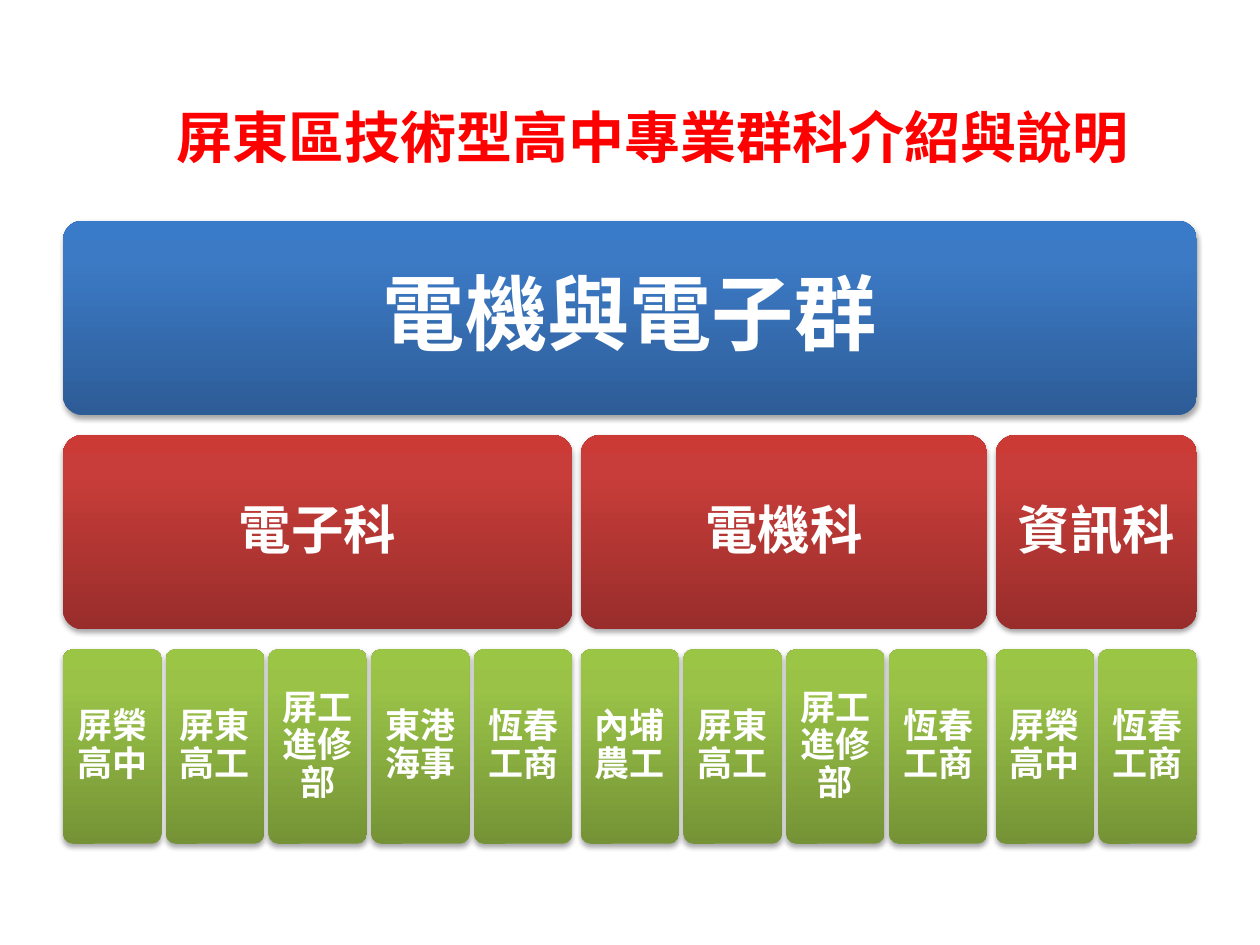
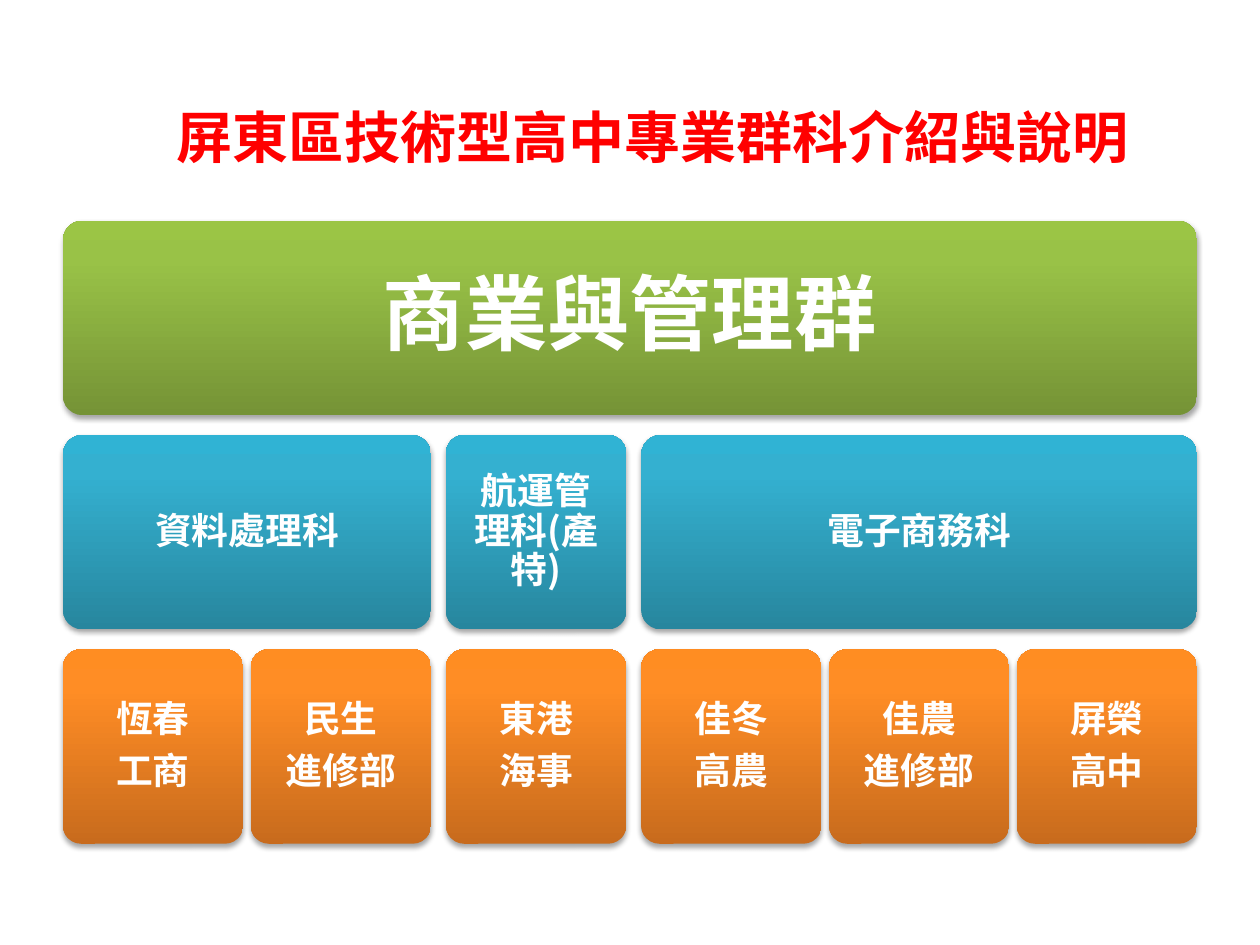
from copy import deepcopy

from lxml import etree
from pptx import Presentation
from pptx import util as u
from pptx.dml.color import RGBColor
from pptx.enum import shapes, text
from pptx.oxml.ns import qn

FONT = "Noto Sans CJK TC"
TITLE = "屏東區技術型高中專業群科介紹與說明"
COLOURS = {"title": "FF0000", "label": "FFFFFF", "shadow": "000000"}
# Gradient colours from the bottom of a tile to its top
GRADIENTS = {
    "blue": ("2D5C97", "3C7AC5", "397BC9"),
    "red": ("982D2B", "C83D39", "CC3A36"),
    "green": ("759336", "99C247", "9BC545"),
    "teal": ("27869E", "34B0D0", "30B3D4"),
    "orange": ("C86B1D", "FF8D25", "FF8D22"),
}
GRADIENT_POSITIONS = (0, 0.8, 1)

# Chart box (left, top, width) and its rows, in centimetres
CHART_BOX = (1.27, 4.45, 22.86)
ROW_HEIGHT, ROW_PITCH = 3.92, 4.32
# Gaps as shares of a school tile's width
SCHOOL_GAP, DEPARTMENT_GAP = 0.042, 0.084

# Each row style: gradient, text size in points, margin in centimetres
CLUSTERS = [
    {
        "name": "電機與電子群",
        "styles": [("blue", 47, 0.5), ("red", 30, 0.3), ("green", 20, 0.2)],
        "departments": [
            ("電子科", ["屏榮高中", "屏東高工", "屏工進修部", "東港海事", "恆春工商"]),
            ("電機科", ["內埔農工", "屏東高工", "屏工進修部", "恆春工商"]),
            ("資訊科", ["屏榮高中", "恆春工商"]),
        ],
    },
    {
        "name": "商業與管理群",
        "styles": [("green", 47, 0.5), ("teal", 21, 0.23), ("orange", 21, 0.23)],
        "departments": [
            ("資料處理科", ["恆春\n工商", "民生\n進修部"]),
            ("航運管理科(產特)", ["東港\n海事"]),
            ("電子商務科", ["佳冬\n高農", "佳農\n進修部", "屏榮\n高中"]),
        ],
    },
]


def format_paragraph(para, size, colour):
    """Set the bold font for both Latin and East Asian characters."""
    para.font.size = u.Pt(size)
    para.font.bold = True
    para.font.name = FONT
    para.font.color.rgb = RGBColor.from_string(COLOURS[colour])
    properties = para._p.pPr.find(qn("a:defRPr"))
    east_asian = deepcopy(properties.find(qn("a:latin")))
    east_asian.tag = qn("a:ea")
    properties.append(east_asian)


def fill_gradient(shape, colours):
    shape.fill.gradient()
    shape.fill.gradient_angle = 90
    stop_list = shape._element.spPr.find(qn("a:gradFill")).find(qn("a:gsLst"))
    stop_list.append(deepcopy(stop_list[-1]))
    for stop, position, colour in zip(
        shape.fill.gradient_stops, GRADIENT_POSITIONS, colours
    ):
        stop.position = position
        stop.color.rgb = RGBColor.from_string(colour)


def add_shadow(shape):
    shape.shadow.inherit = False
    effects = shape._element.spPr.find(qn("a:effectLst"))
    shadow = etree.SubElement(
        effects, qn("a:outerShdw"), blurRad=str(u.Pt(3.1)),
        dist=str(u.Pt(1.8)), dir="5400000", rotWithShape="0",
    )
    colour = etree.SubElement(shadow, qn("a:srgbClr"), val=COLOURS["shadow"])
    etree.SubElement(colour, qn("a:alpha"), val="35000")


def add_tile(page, left, top, width, label, style):
    gradient, size, margin = style
    tile = page.shapes.add_shape(
        shapes.MSO_SHAPE.ROUNDED_RECTANGLE,
        u.Cm(left), u.Cm(top), u.Cm(width), u.Cm(ROW_HEIGHT),
    )
    tile.adjustments[0] = 0.1
    fill_gradient(tile, GRADIENTS[gradient])
    tile.line.fill.background()
    add_shadow(tile)

    frame = tile.text_frame
    frame.word_wrap = True
    frame.vertical_anchor = text.MSO_ANCHOR.MIDDLE
    frame.margin_left = frame.margin_right = u.Cm(margin)
    frame.margin_top = frame.margin_bottom = u.Cm(margin)
    frame.text = label
    for index, para in enumerate(frame.paragraphs):
        para.alignment = text.PP_ALIGN.CENTER
        para.line_spacing = 0.9
        if index:
            para.space_before = u.Pt(7.3)
        format_paragraph(para, size, "label")


def add_title(page):
    title = page.shapes.title
    title.left, title.top = u.Cm(3.3), u.Cm(1.93)
    title.width, title.height = u.Cm(23.8), u.Cm(1.62)
    frame = title.text_frame
    frame.text = TITLE
    frame.word_wrap = True
    frame.auto_size = text.MSO_AUTO_SIZE.SHAPE_TO_FIT_TEXT
    frame.vertical_anchor = text.MSO_ANCHOR.TOP
    para = frame.paragraphs[0]
    para.alignment = text.PP_ALIGN.LEFT
    format_paragraph(para, 32, "title")


def add_hierarchy(page, box, cluster):
    """Stack the cluster over its departments, and those over their schools."""
    left, top, width = box
    cluster_style, department_style, school_style = cluster["styles"]
    departments = cluster["departments"]
    school_count = sum(len(schools) for _, schools in departments)
    school_width = width / (
        school_count
        + SCHOOL_GAP * (school_count - len(departments))
        + DEPARTMENT_GAP * (len(departments) - 1)
    )
    school_pitch = school_width * (1 + SCHOOL_GAP)

    add_tile(page, left, top, width, cluster["name"], cluster_style)
    for department, schools in departments:
        span = school_pitch * (len(schools) - 1) + school_width
        add_tile(page, left, top + ROW_PITCH, span, department, department_style)
        for index, school in enumerate(schools):
            add_tile(page, left + index * school_pitch, top + 2 * ROW_PITCH,
                     school_width, school, school_style)
        left += span + DEPARTMENT_GAP * school_width


def main():
    deck = Presentation()
    deck.slide_width, deck.slide_height = u.Cm(25.4), u.Cm(19.05)
    title_only = deck.slide_layouts[5]
    for cluster in CLUSTERS:
        page = deck.slides.add_slide(title_only)
        add_title(page)
        add_hierarchy(page, CHART_BOX, cluster)
    deck.save("out.pptx")


if __name__ == "__main__":
    main()
